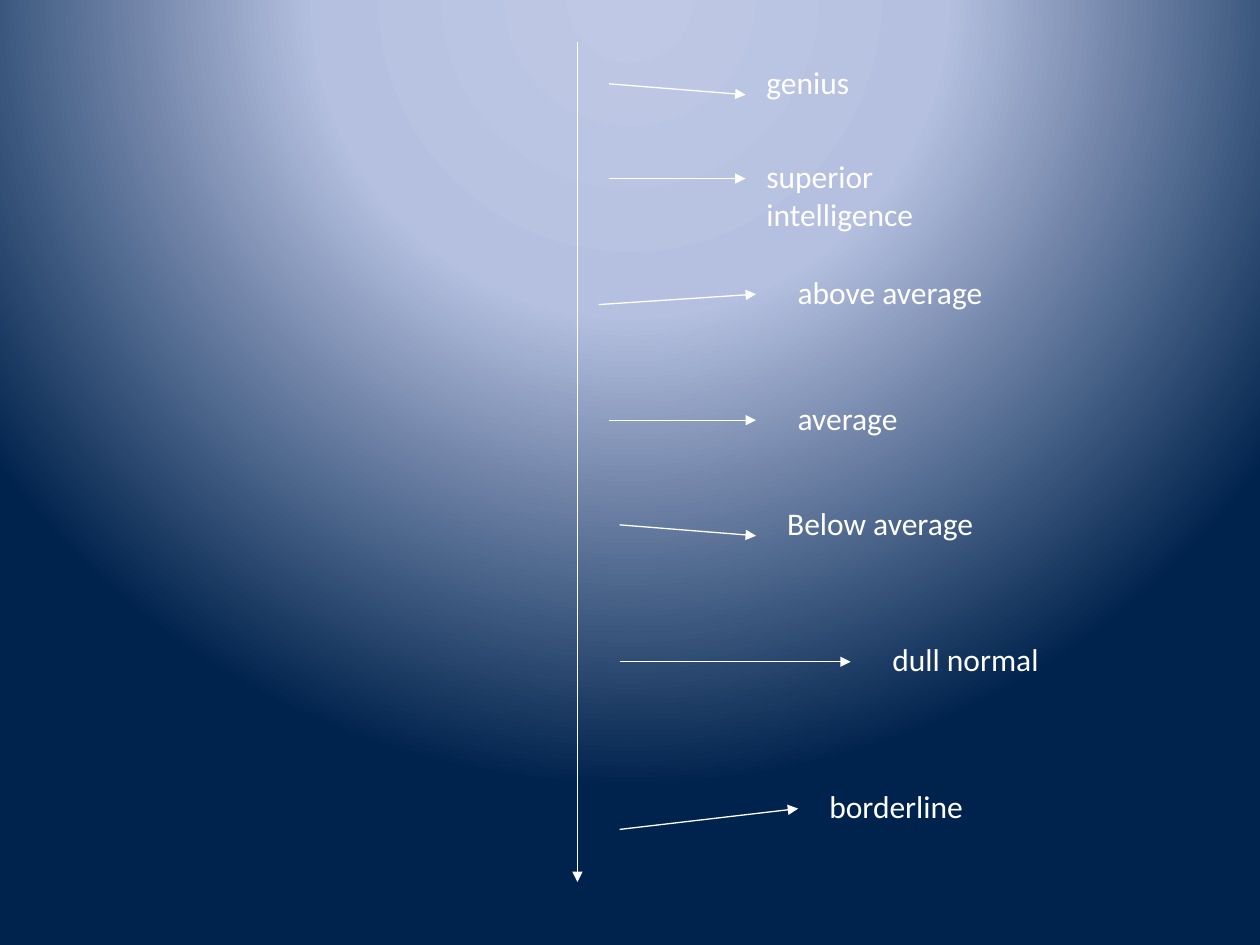
from dataclasses import dataclass

from lxml.etree import SubElement
from pptx import Presentation
from pptx.dml.color import RGBColor
from pptx.enum.shapes import MSO_CONNECTOR
from pptx.enum.text import MSO_AUTO_SIZE
from pptx.oxml.ns import qn
from pptx.slide import Slide
from pptx.util import Cm, Pt

BACKGROUND_STOPS = [(0, "BFC9E5"), (40, "B5C0E0"), (100, "00234D")]
BACKGROUND_FOCUS = {"l": 50, "t": -80, "r": 50, "b": 180}

SCALE_AXIS = ((11.64, 0.85), (11.64, 17.78))

# Label lines, label left, top and width, arrow start, arrow end (cm)
LEVELS = [
    (["genius"], (15.2, 1.14, 2.59), (12.28, 1.69), (15.03, 1.91)),
    (["superior", "intelligence"], (15.2, 3.05, 4.14), (12.28, 3.6), (15.03, 3.6)),
    (["above average"], (15.83, 5.38, 5.21), (12.07, 6.14), (15.24, 5.93)),
    (["average"], (15.83, 7.92, 3.07), (12.28, 8.47), (15.24, 8.47)),
    (["Below average"], (15.62, 10.03, 5.18), (12.49, 10.58), (15.24, 10.8)),
    (["dull normal"], (17.74, 12.78, 4.11), (12.49, 13.34), (17.15, 13.34)),
    (["borderline"], (16.47, 15.75, 3.73), (12.49, 16.72), (16.09, 16.3)),
]


def color(hex_value):
    return RGBColor.from_string(hex_value)


def percent(value):
    """Give a percentage in the thousandths that DrawingML uses."""
    return str(value * 1000)


@dataclass
class ScaleSlide:
    slide: Slide
    font: str = "Calibri"
    size: float = 18
    foreground: str = "FFFFFF"
    line_width: float = 0.75

    def radial_background(self, stops, focus):
        fill = self.slide.background.fill
        fill.gradient()
        gradient = next(self.slide.element.iter(qn("a:gradFill")))
        for child in list(gradient):
            gradient.remove(child)
        stop_list = SubElement(gradient, qn("a:gsLst"))
        for position, hex_value in stops:
            stop = SubElement(stop_list, qn("a:gs"), pos=percent(position))
            SubElement(stop, qn("a:srgbClr"), val=hex_value)
        circle = SubElement(gradient, qn("a:path"), path="circle")
        edges = {side: percent(value) for side, value in focus.items()}
        SubElement(circle, qn("a:fillToRect"), **edges)

    def arrow(self, start, end):
        connector = self.slide.shapes.add_connector(
            MSO_CONNECTOR.STRAIGHT, *(Cm(value) for value in (*start, *end))
        )
        connector.line.color.rgb = color(self.foreground)
        connector.line.width = Pt(self.line_width)
        SubElement(connector.line._get_or_add_ln(), qn("a:tailEnd"), type="triangle")
        SubElement(connector._element.spPr, qn("a:effectLst"))

    def label(self, lines, left, top, width):
        height = 0.26 + 0.76 * len(lines)
        box = self.slide.shapes.add_textbox(Cm(left), Cm(top), Cm(width), Cm(height))
        frame = box.text_frame
        frame.text = "\n".join(lines)
        frame.word_wrap = False
        frame.auto_size = MSO_AUTO_SIZE.SHAPE_TO_FIT_TEXT
        font_format = {"name": self.font, "size": Pt(self.size)}
        for paragraph in frame.paragraphs:
            for run in paragraph.runs:
                for attribute, value in font_format.items():
                    setattr(run.font, attribute, value)
                run.font.color.rgb = color(self.foreground)


def main():
    presentation = Presentation()
    presentation.slide_width = Cm(25.4)
    presentation.slide_height = Cm(19.05)
    blank_layout = presentation.slide_layouts[6]
    scale = ScaleSlide(presentation.slides.add_slide(blank_layout))

    scale.radial_background(BACKGROUND_STOPS, BACKGROUND_FOCUS)
    scale.arrow(*SCALE_AXIS)
    for lines, place, start, end in LEVELS:
        scale.arrow(start, end)
        scale.label(lines, *place)

    presentation.save("out.pptx")


if __name__ == "__main__":
    main()
